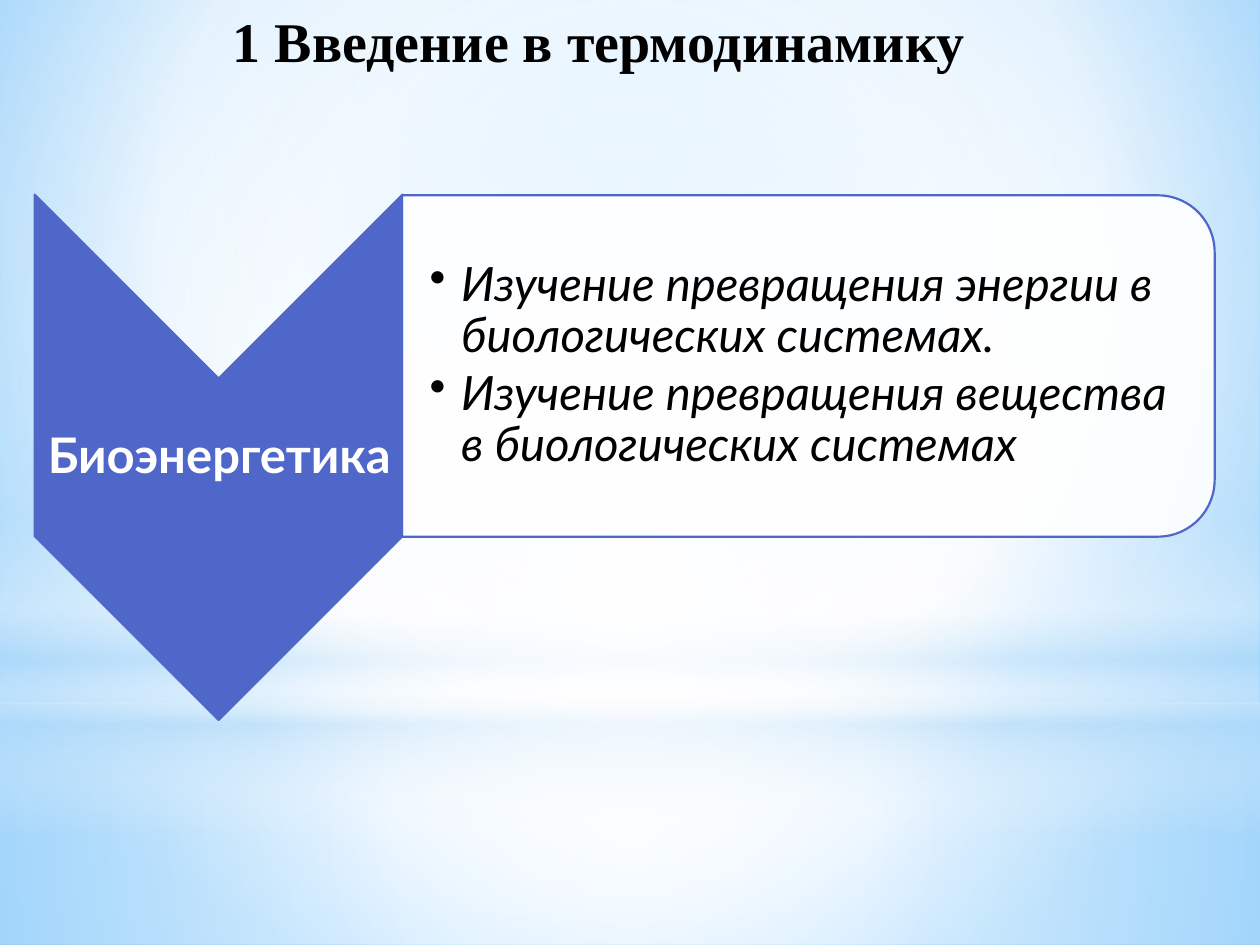
from dataclasses import dataclass
from typing import Optional

from lxml import etree
from pptx import Presentation
from pptx.dml.color import RGBColor
from pptx.enum.shapes import MSO_SHAPE
from pptx.enum.text import MSO_ANCHOR, PP_ALIGN
from pptx.oxml import parse_xml
from pptx.oxml.ns import nsdecls, qn
from pptx.util import Inches, Pt

RECT, OVAL = MSO_SHAPE.RECTANGLE, MSO_SHAPE.OVAL
CHEVRON, ROUNDED = MSO_SHAPE.CHEVRON, MSO_SHAPE.ROUND_2_SAME_RECTANGLE
TOP, MIDDLE = MSO_ANCHOR.TOP, MSO_ANCHOR.MIDDLE
LEFT, CENTER = PP_ALIGN.LEFT, PP_ALIGN.CENTER

INDIGO = RGBColor(0x4E, 0x67, 0xC8)
WHITE = RGBColor(0xFF, 0xFF, 0xFF)
BLACK = RGBColor(0, 0, 0)
PALE_BLUE = RGBColor(0xB4, 0xDC, 0xFA)
SKY = RGBColor(0x9E, 0xD5, 0xFF)
DEEP_SKY = RGBColor(0x5B, 0xB9, 0xFF)

Box = tuple[float, float, float, float]
Stop = tuple[int, RGBColor, int]  # position %, colour, opacity %


@dataclass
class Glow:
    """A soft background layer; without a focus its gradient runs downwards."""
    box: Box
    kind: MSO_SHAPE
    stops: list[Stop]
    focus: Optional[Box] = (50, 50, 50, 50)


@dataclass
class Label:
    box: Box
    lines: list[str]
    font: str
    size: float
    color: RGBColor
    bold: bool = False
    italic: bool = False
    align: PP_ALIGN = CENTER
    anchor: MSO_ANCHOR = MIDDLE
    inset: float = 0.02
    left_inset: float = 0.02
    spacing: float = 0.9
    after: float = 0
    bullet_indent: float = 0


GLOWS = [
    Glow((0, 5.58, 10, 1.92), RECT,
         [(0, WHITE, 91), (37, WHITE, 76), (100, PALE_BLUE, 79)]),
    Glow((0, 0, 10, 5.58), RECT,
         [(0, WHITE, 89), (48, WHITE, 62), (100, PALE_BLUE, 79)]),
    Glow((0, 4.12, 10, 2.5), RECT,
         [(0, WHITE, 0), (29, WHITE, 30), (45, PALE_BLUE, 40),
          (55, WHITE, 26), (65, PALE_BLUE, 60), (100, WHITE, 0)], None),
    Glow((0, 1.75, 10, 5.58), OVAL, [(0, WHITE, 100), (56, WHITE, 0)]),
]

TITLE = Label((0.28, 0, 8.9, 1.25), ["1 Введение в термодинамику"],
              "Times New Roman", 32, BLACK, bold=True, anchor=TOP,
              inset=0.05, left_inset=0.1, spacing=1)
TOPIC = Label((0.28, 3.01, 2.92, 1.25), ["Биоэнергетика"],
              "Lato", 28, WHITE, bold=True, after=10)
SUBJECTS = Label((3.2, 1.68, 6.32, 2.45),
                 ["Изучение превращения энергии в биологических системах.",
                  "Изучение превращения вещества в биологических системах"],
                 "Lato", 27, BLACK, italic=True, align=LEFT,
                 left_inset=0.21, after=4, bullet_indent=0.25)


def gradient(stops: list[Stop], focus: Optional[Box]):
    marks = "".join(
        f'<a:gs pos="{pos * 1000}"><a:srgbClr val="{color}">'
        f'<a:alpha val="{alpha * 1000}"/></a:srgbClr></a:gs>'
        for pos, color, alpha in stops)
    if focus is None:
        course = '<a:lin ang="5400000" scaled="0"/>'
    else:
        sides = " ".join(f'{side}="{value * 1000}"'
                         for side, value in zip("ltrb", focus))
        course = f'<a:path path="circle"><a:fillToRect {sides}/></a:path>'
    return parse_xml(f'<a:gradFill {nsdecls("a")} rotWithShape="1">'
                     f'<a:gsLst>{marks}</a:gsLst>{course}</a:gradFill>')


def replace_solid(parent, fill) -> None:
    parent.replace(parent.find(qn("a:solidFill")), fill)


def add_background(slide) -> None:
    slide.background.fill.solid()
    stops = [(0, SKY, 100), (60, WHITE, 100), (100, DEEP_SKY, 100)]
    properties = slide.background._cSld.find(".//" + qn("p:bgPr"))
    replace_solid(properties, gradient(stops, (20, 10, 20, 60)))


def add_glow(slide, glow: Glow) -> None:
    shape = slide.shapes.add_shape(glow.kind, *map(Inches, glow.box))
    shape.shadow.inherit = False
    shape.line.fill.background()
    shape.fill.solid()
    replace_solid(shape._element.spPr, gradient(glow.stops, glow.focus))


def add_turned_shape(slide, kind: MSO_SHAPE, box: Box, color: RGBColor,
                     opacity: int = 100) -> None:
    shape = slide.shapes.add_shape(kind, *map(Inches, box))
    shape.rotation = 90
    shape.shadow.inherit = False
    shape.fill.solid()
    shape.fill.fore_color.rgb = color
    shape.line.color.rgb = INDIGO
    shape.line.width = Pt(1.25)
    if opacity < 100:
        swatch = shape._element.spPr.find(qn("a:solidFill"))[0]
        etree.SubElement(swatch, qn("a:alpha"), val=str(opacity * 1000))


def add_label(slide, label: Label) -> None:
    frame = slide.shapes.add_textbox(*map(Inches, label.box)).text_frame
    frame.word_wrap = True
    frame.vertical_anchor = label.anchor
    frame.margin_top = frame.margin_bottom = Inches(label.inset)
    frame.margin_left = Inches(label.left_inset)
    frame.margin_right = Inches(label.inset)
    frame.text = "\n".join(label.lines)
    for paragraph in frame.paragraphs:
        paragraph.alignment = label.align
        paragraph.line_spacing = label.spacing
        paragraph.space_after = Pt(label.after)
        font = paragraph.font
        font.name, font.size = label.font, Pt(label.size)
        font.bold, font.italic = label.bold, label.italic
        font.color.rgb = label.color
        if label.bullet_indent:
            properties = paragraph._p.get_or_add_pPr()
            indent = Inches(label.bullet_indent)
            properties.set("marL", str(indent))
            properties.set("indent", str(-indent))
            bullet = parse_xml(f'<a:buChar {nsdecls("a")} char="•"/>')
            properties.find(qn("a:defRPr")).addprevious(bullet)


def main() -> None:
    prs = Presentation()
    prs.slide_width, prs.slide_height = Inches(10), Inches(7.5)
    slide = prs.slides.add_slide(prs.slide_layouts[6])

    # Background
    add_background(slide)
    for glow in GLOWS:
        add_glow(slide, glow)

    # Title
    add_label(slide, TITLE)

    # Topic arrow
    add_turned_shape(slide, CHEVRON, (-0.35, 2.17, 4.17, 2.92), INDIGO)
    add_label(slide, TOPIC)

    # Subjects panel
    add_turned_shape(slide, ROUNDED, (5.06, -0.32, 2.71, 6.45), WHITE, 90)
    add_label(slide, SUBJECTS)

    prs.save("out.pptx")


if __name__ == "__main__":
    main()
